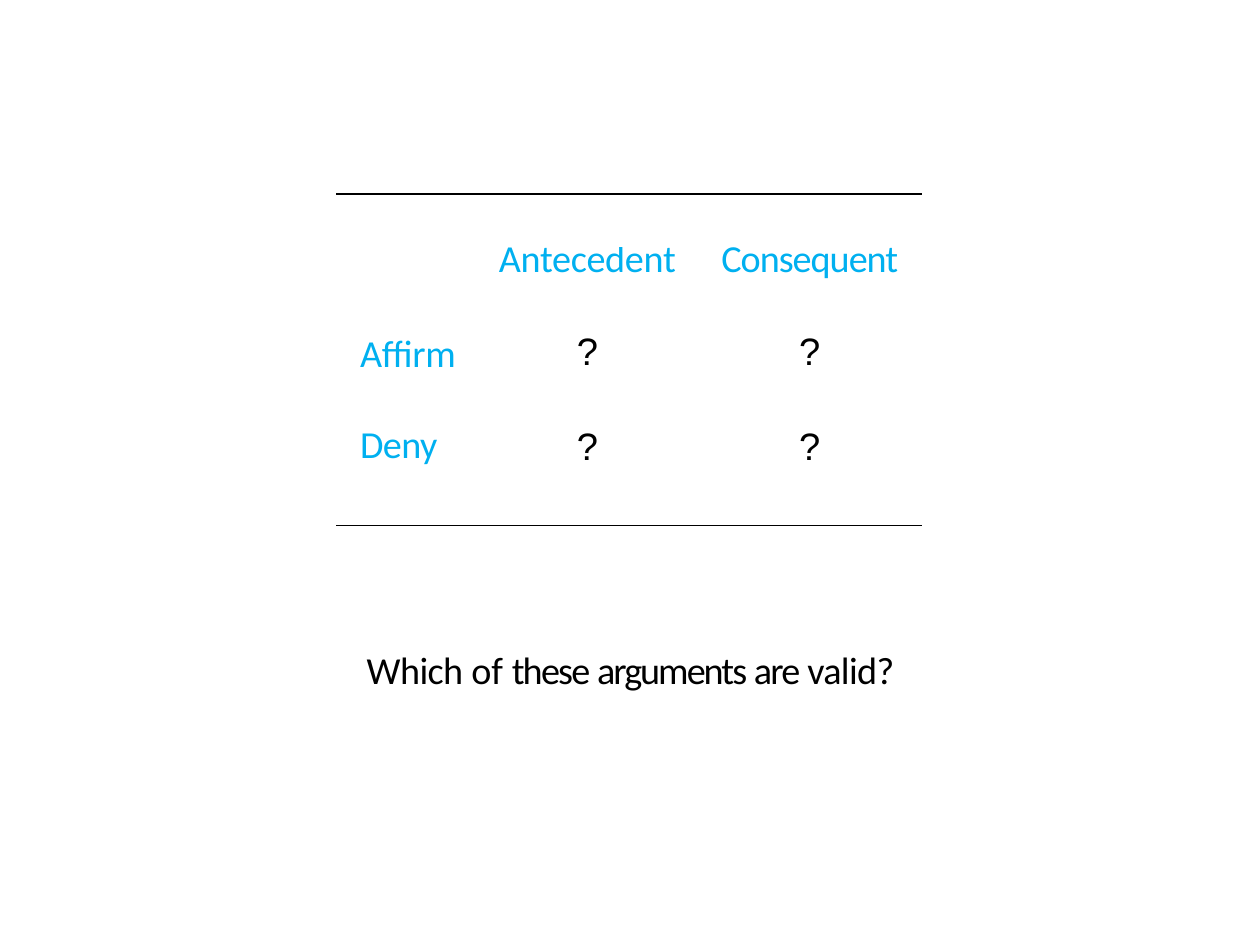
import pptx
import pptx.dml.color
import pptx.enum.shapes
import pptx.enum.text
import pptx.oxml.ns
import pptx.util
from lxml import etree

Cm, Pt = pptx.util.Cm, pptx.util.Pt
ALIGN = pptx.enum.text.PP_ALIGN
COLORS = {"label": "00B0F0", "ink": "000000"}
NO_MARGINS = {"margin_left": 0, "margin_right": 0, "margin_top": 0, "margin_bottom": 0}
LABEL_FONT, MARK_FONT = "Calibri", "Arial"
TEXT_SIZE = Pt(11)


def apply(target, values):
    """Set every attribute named in values on target."""
    for name, value in values.items():
        setattr(target, name, value)


def add_span(para, text, font, color, spacing):
    """Add a run; spacing is the letter spacing in points."""
    span = para.add_run()
    span.text = text
    apply(span.font, {"name": font, "size": TEXT_SIZE})
    span.font.color.rgb = pptx.dml.color.RGBColor.from_string(COLORS[color])
    span.font._element.set("spc", str(round(spacing * 100)))


deck = pptx.Presentation()
# The page format is a whole number of half points
apply(deck, {"slide_width": Pt(363), "slide_height": Pt(272.5)})
page = deck.slides.add_slide(deck.slide_layouts[6])

# Rules above and below the table
rule_left, rule_width = Cm(3.42), Cm(5.95)
for rule_top in (Cm(1.97), Cm(5.34)):
    rule = page.shapes.add_connector(
        pptx.enum.shapes.MSO_CONNECTOR.STRAIGHT,
        rule_left, rule_top, rule_left + rule_width, rule_top)
    rule.line.width = Pt(0.4)
    rule.line.color.rgb = pptx.dml.color.RGBColor.from_string(COLORS["ink"])
    etree.SubElement(rule._element.spPr, pptx.oxml.ns.qn("a:effectLst"))

# Table of argument forms
rows = [
    ["", "Antecedent", "Consequent"],
    ["Affirm", "?", "?"],
    ["Deny", "?", "?"],
]
letter_spacing = {"Antecedent": -0.1, "Consequent": -0.3, "Affirm": -0.1, "Deny": -0.2, "?": -0.5}
column_widths = [Cm(1.3), Cm(2.24), Cm(2.16)]
row_heights = [Cm(0.68), Cm(0.95), Cm(0.66)]
row_formats = [
    {"line_spacing": Pt(10.5)},
    {"space_before": Pt(5.3)},
    {"space_before": Pt(5.3), "line_spacing": Pt(12.8)},
]
column_alignments = [ALIGN.LEFT, ALIGN.CENTER, ALIGN.CENTER]
column_indents = [Cm(0.11), 0, Cm(0.12)]

table = page.shapes.add_table(
    3, 3, Cm(3.55), Cm(2.5), sum(column_widths), sum(row_heights)).table
apply(table, {"first_row": False, "horz_banding": False})
for column, width in zip(table.columns, column_widths):
    column.width = width
for row_index, row in enumerate(rows):
    table.rows[row_index].height = row_heights[row_index]
    for column_index, text in enumerate(row):
        cell = table.cell(row_index, column_index)
        cell.fill.background()
        apply(cell, NO_MARGINS)
        cell.margin_top = Cm(0.18) if row_index else 0
        cell.margin_left = column_indents[column_index]
        para = cell.text_frame.paragraphs[0]
        apply(para, {"alignment": column_alignments[column_index], **row_formats[row_index]})
        if text == "?":
            add_span(para, text, MARK_FONT, "ink", letter_spacing[text])
        elif text:
            add_span(para, text, LABEL_FONT, "label", letter_spacing[text])
        else:
            # Keeps the empty corner cell from stretching its row
            end = etree.SubElement(para._p, pptx.oxml.ns.qn("a:endParaRPr"))
            end.set("sz", str(round(TEXT_SIZE.pt * 100)))

# Question under the table
box = page.shapes.add_textbox(rule_left, Cm(6.54), rule_width, Cm(0.51))
apply(box.text_frame, {**NO_MARGINS, "margin_left": Cm(0.03), "margin_top": Cm(0.03),
                       "word_wrap": True})
para = box.text_frame.paragraphs[0]
apply(para, {"alignment": ALIGN.CENTER, "space_before": Pt(0.9)})
question = [("Which ", -0.2), ("of ", 0), ("these ", -0.55), ("arguments ", -0.6),
            ("are ", -0.55), ("valid?", -0.2)]
for text, spacing in question:
    add_span(para, text, LABEL_FONT, "ink", spacing)

deck.save("out.pptx")
